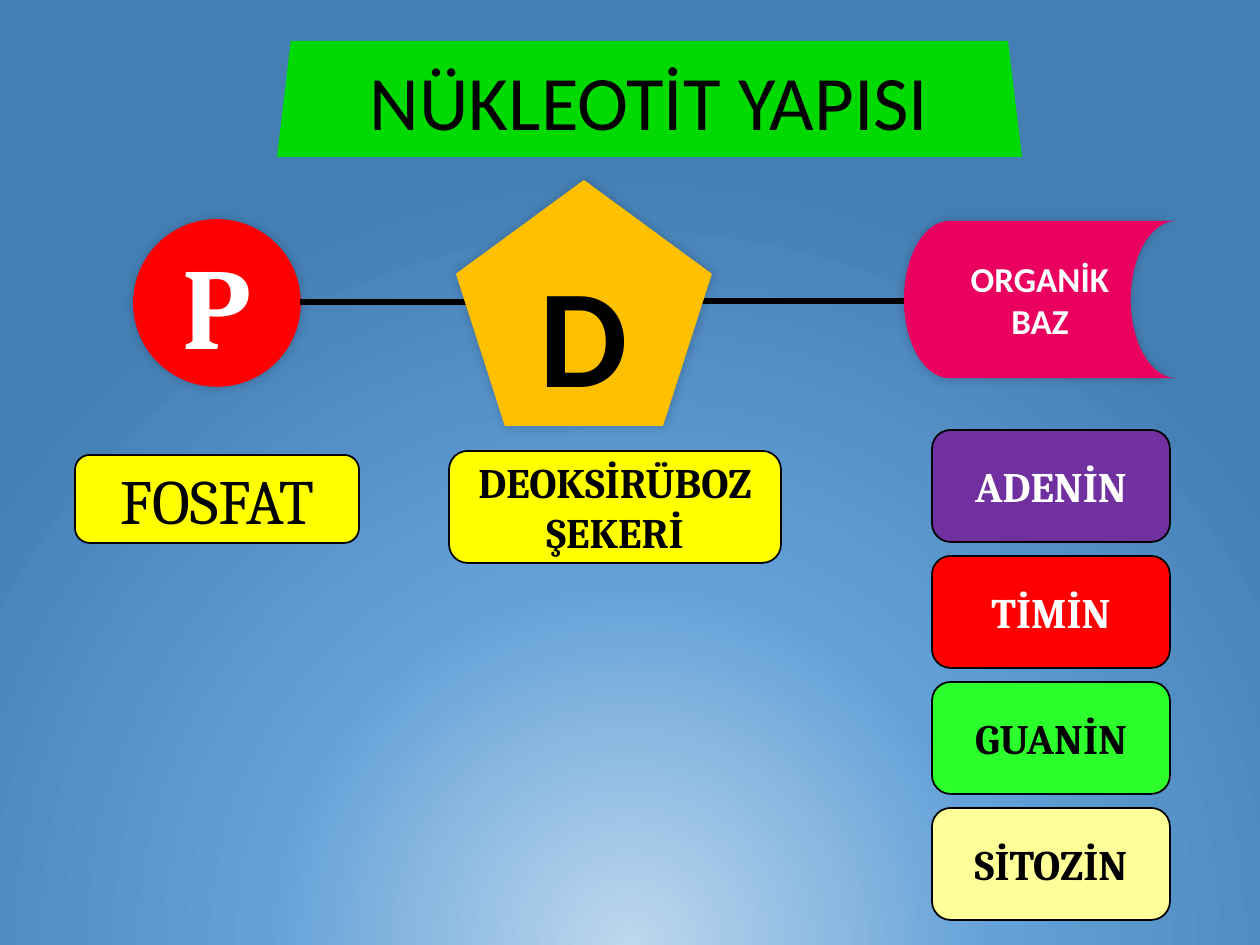
from dataclasses import dataclass

from lxml import etree
from pptx import Presentation
from pptx.dml.color import RGBColor
from pptx.enum.shapes import MSO_CONNECTOR, MSO_SHAPE
from pptx.enum.text import MSO_ANCHOR, PP_ALIGN
from pptx.oxml import parse_xml
from pptx.oxml.ns import nsdecls, qn
from pptx.util import Pt

PX = 914400 // 126
LINE = MSO_CONNECTOR.STRAIGHT
ROUND = MSO_SHAPE.ROUNDED_RECTANGLE
OVAL = MSO_SHAPE.OVAL
PENTAGON = MSO_SHAPE.REGULAR_PENTAGON
STORE = MSO_SHAPE.FLOWCHART_STORED_DATA
TRAPEZOID = MSO_SHAPE.TRAPEZOID
MIDDLE = MSO_ANCHOR.MIDDLE
CENTER = PP_ALIGN.CENTER


@dataclass
class Theme:
    black: str = "000000"
    white: str = "FFFFFF"
    title: str = "00DA00"
    red: str = "FF0000"
    gold: str = "FFC000"
    pink: str = "EA005F"
    yellow: str = "FFFF00"
    purple: str = "7030A0"
    green: str = "2DFF2D"
    cream: str = "FFFF99"
    glow: tuple = ((0, "BDD7EE"), (47, "63A0D7"), (100, "447FB4"))
    sans: str = "Calibri"
    serif: str = "Cambria"
    small: int = 20
    label: int = 24
    large: int = 36
    head: int = 44
    phos: int = 66
    sugar: int = 80


T = Theme()


def put(kind, box, text, fill, *, size=T.label, font=T.serif, color=T.black,
        bold=True, line=None, shadow=False):
    """Add a filled shape with centred text, one paragraph per line."""
    shape = slide.shapes.add_shape(kind, *(n * PX for n in box))
    shape.shadow.inherit = False
    shape.fill.solid()
    shape.fill.fore_color.rgb = RGBColor.from_string(fill)
    if line:
        shape.line.color.rgb = RGBColor.from_string(line)
        shape.line.width = Pt(1)
    else:
        shape.line.fill.background()
    if shadow:
        effects = shape._element.spPr.find(qn("a:effectLst"))
        effects.append(parse_xml(
            f'<a:outerShdw {nsdecls("a")} blurRad="76200" dist="0" dir="18900000">'
            f'<a:srgbClr val="{T.black}"><a:alpha val="20000"/></a:srgbClr>'
            '</a:outerShdw>'))
    frame = shape.text_frame
    frame.word_wrap = True
    frame.vertical_anchor = MIDDLE
    frame.text = text
    for para in frame.paragraphs:
        para.alignment = CENTER
        para.font.size = Pt(size)
        para.font.name = font
        para.font.bold = bold
        para.font.color.rgb = RGBColor.from_string(color)
    return shape


def join(left, right, y):
    bond = slide.shapes.add_connector(LINE, left * PX, y * PX, right * PX, y * PX)
    bond.line.color.rgb = RGBColor.from_string(T.black)
    bond.line.width = Pt(3)
    etree.SubElement(bond._element.spPr, qn("a:effectLst"))


deck = Presentation()
deck.slide_width = 1260 * PX
deck.slide_height = 945 * PX
slide = deck.slides.add_slide(deck.slide_layouts[6])

# Background glow
stops = "".join(f'<a:gs pos="{pos * 1000}"><a:srgbClr val="{color}"/></a:gs>'
                for pos, color in T.glow)
slide._element.cSld.insert(0, parse_xml(
    f'<p:bg {nsdecls("p", "a")}><p:bgPr><a:gradFill rotWithShape="1">'
    f'<a:gsLst>{stops}</a:gsLst><a:path path="circle">'
    '<a:fillToRect l="50000" t="130000" r="50000" b="-30000"/></a:path>'
    '</a:gradFill><a:effectLst/></p:bgPr></p:bg>'))

# Title and nucleotide chain
join(679, 932, 301)
title = put(TRAPEZOID, (277, 41, 745, 116), "NÜKLEOTİT YAPISI", T.title,
            size=T.head, font=T.sans, bold=False)
title.adjustments[0] = 0.12
put(OVAL, (134, 220, 166, 166), "P", T.red, size=T.phos, color=T.white,
    line=T.red, shadow=True)
join(300, 478, 302)
put(PENTAGON, (457, 181, 254, 244), "D", T.gold, size=T.sugar, font=T.sans,
    line=T.gold, shadow=True)
put(STORE, (904, 221, 272, 157), "ORGANİK BAZ", T.pink, size=T.small,
    font=T.sans, color=T.white, shadow=True)

# Labels
put(ROUND, (75, 455, 284, 88), "FOSFAT", T.yellow, size=T.large, bold=False,
    line=T.black)
put(ROUND, (449, 451, 332, 112), "DEOKSİRÜBOZ\nŞEKERİ", T.yellow, line=T.black)

# Organic bases
bases = (
    ("ADENİN", T.purple, T.white),
    ("TİMİN", T.red, T.white),
    ("GUANİN", T.green, T.black),
    ("SİTOZİN", T.cream, T.black),
)
for row, (name, fill, color) in enumerate(bases):
    put(ROUND, (932, 430 + 126 * row, 238, 112), name, fill, color=color,
        line=T.black)

deck.save("out.pptx")
